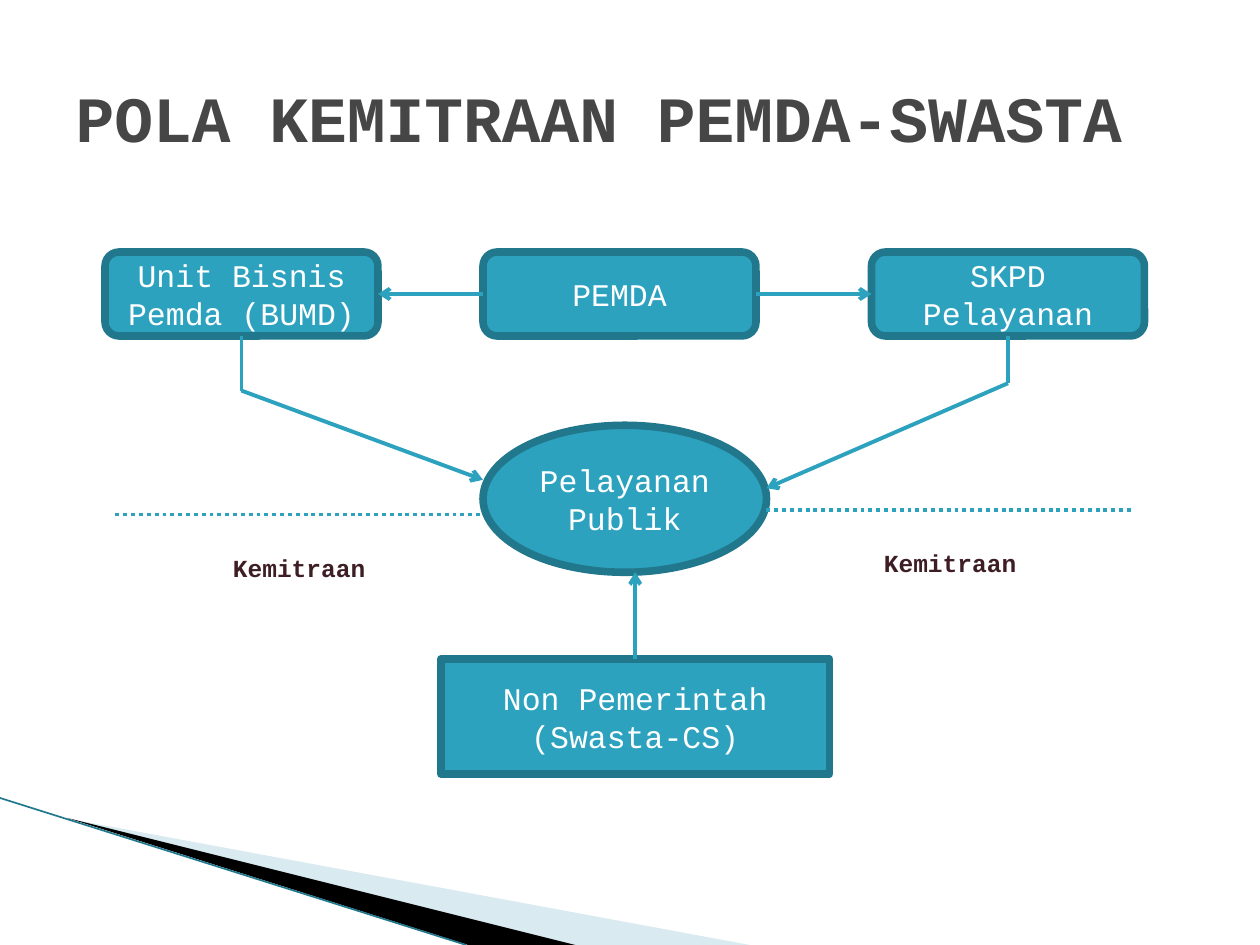
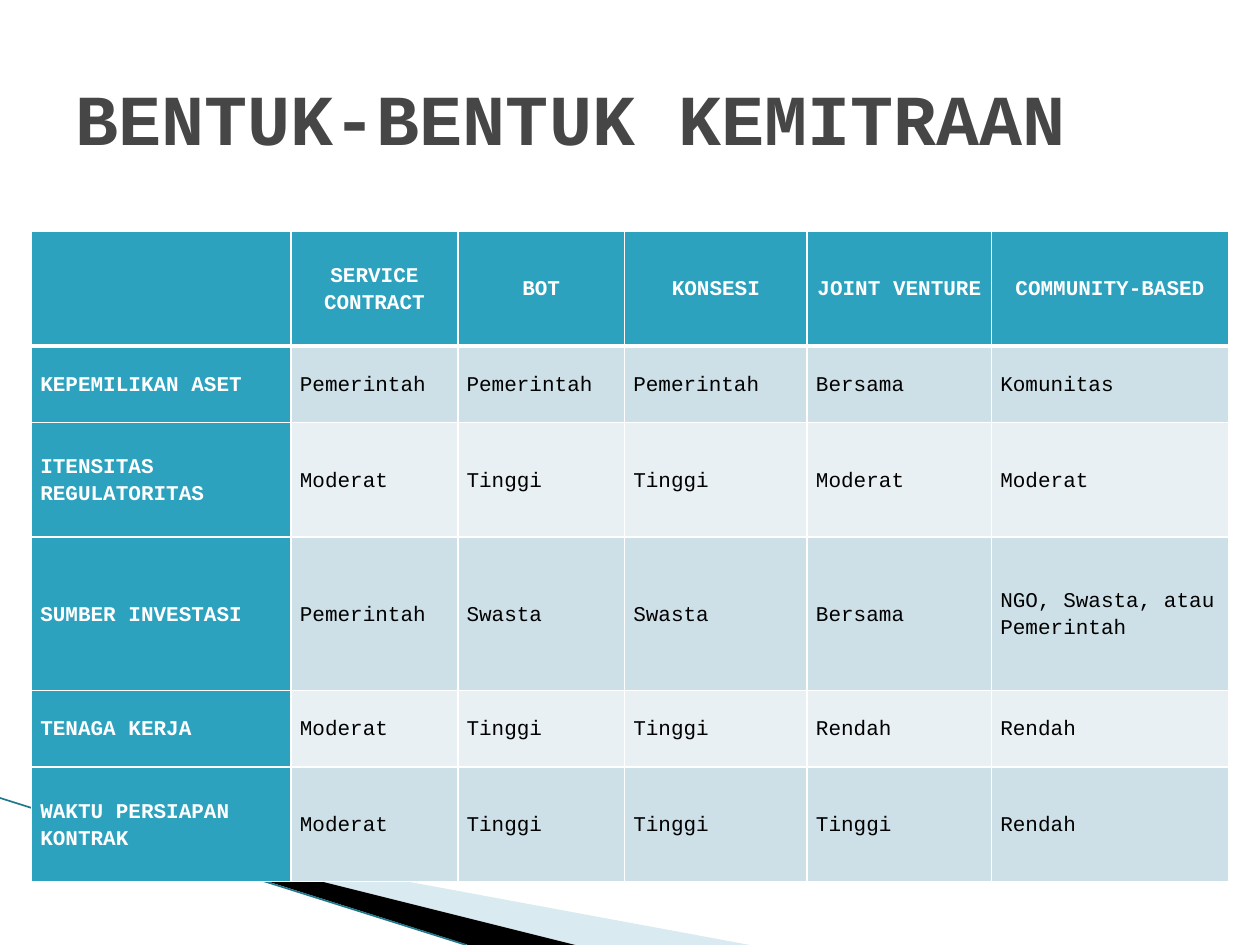
import pptx
import pptx.util
import pptx.dml.color
import pptx.enum.shapes
import pptx.enum.text
import pptx.enum.dml
import pptx.oxml
import pptx.oxml.ns
from dataclasses import dataclass
from lxml import etree

SHAPE = pptx.enum.shapes.MSO_SHAPE
ALIGN = pptx.enum.text.PP_ALIGN
MIDDLE = pptx.enum.text.MSO_ANCHOR.MIDDLE
DOTTED = pptx.enum.dml.MSO_LINE.ROUND_DOT


@dataclass(frozen=True)
class Theme:
    font: str = "Courier New"
    title: str = "464646"
    accent: str = "2DA2BF"
    edge: str = "21788D"
    white: str = "FFFFFF"
    black: str = "000000"
    label: str = "3E1E25"
    sweep: str = "A0CBDC"
    bands: tuple = ("CDE0E8", "E8F0F4")
    box_size: float = 18
    label_size: float = 14
    cell_size: float = 12
    edge_width: float = 4.33
    link_width: float = 2.25
    sweep_width: float = 0.95


T = Theme()
WIDTH, HEIGHT = 10, 7.5
COLS, ROWS = 120, 90
TITLE_AREA = (6, 3.6, 108, 15)

SWEEPS = [
    (T.sweep, 40, [(6.6, 78), (71.4, 90), (54.7, 90)]),
    (T.black, 100, [(6.4, 77.9), (54.8, 90), (44.6, 90)]),
]
SWEEP_EDGE = ((0, 76), (44.4, 90))

PATTERN_TITLE = ("POLA KEMITRAAN PEMDA-SWASTA", 36.9)
BOXES = {
    "bumd": ("Unit Bisnis Pemda (BUMD)", SHAPE.ROUNDED_RECTANGLE, (10, 24, 26, 8)),
    "pemda": ("PEMDA", SHAPE.ROUNDED_RECTANGLE, (46, 24, 26, 8)),
    "skpd": ("SKPD Pelayanan", SHAPE.ROUNDED_RECTANGLE, (83, 24, 26, 8)),
    "service": ("Pelayanan Publik", SHAPE.OVAL, (46, 40.5, 27, 14)),
    "private": ("Non Pemerintah (Swasta-CS)", SHAPE.RECTANGLE, (42, 62.75, 37, 11)),
}
LABELS = [("Kemitraan", (16, 51.8, 25, 4.5)), ("Kemitraan", (78, 51.3, 25, 4.5))]

FORMS_TITLE = ("BENTUK-BENTUK KEMITRAAN", 41)
FORMS_AREA = (3, 22, 114, 62)
FORMS_COLUMNS = [24.72, 15.88, 15.88, 17.4, 17.56, 22.56]
FORMS_ROW_SHARES = [3, 2, 3, 4, 2, 3]
FORMS = [
    ("", "SERVICE CONTRACT", "BOT", "KONSESI", "JOINT VENTURE", "COMMUNITY-BASED"),
    ("KEPEMILIKAN ASET", "Pemerintah", "Pemerintah", "Pemerintah", "Bersama", "Komunitas"),
    ("ITENSITAS REGULATORITAS", "Moderat", "Tinggi", "Tinggi", "Moderat", "Moderat"),
    ("SUMBER INVESTASI", "Pemerintah", "Swasta", "Swasta", "Bersama", "NGO, Swasta, atau Pemerintah"),
    ("TENAGA KERJA", "Moderat", "Tinggi", "Tinggi", "Rendah", "Rendah"),
    ("WAKTU PERSIAPAN KONTRAK", "Moderat", "Tinggi", "Tinggi", "Tinggi", "Rendah"),
]


def x(col):
    return pptx.util.Inches(col * WIDTH / COLS)


def y(row):
    return pptx.util.Inches(row * HEIGHT / ROWS)


def place(area):
    left, top, width, height = area
    return x(left), y(top), x(width), y(height)


def rgb(color):
    return pptx.dml.color.RGBColor.from_string(color)


def paint(part, color):
    part.fill.solid()
    part.fill.fore_color.rgb = rgb(color)


def write(tf, text, size, color, bold=False, align=ALIGN.CENTER):
    tf.text = text
    p = tf.paragraphs[0]
    p.alignment = align
    for r in p.runs:
        r.font.name = T.font
        r.font.size = pptx.util.Pt(size)
        r.font.bold = bold
        r.font.color.rgb = rgb(color)
    return p


def add_child(parent, tag, **attributes):
    return etree.SubElement(parent, pptx.oxml.ns.qn(tag), **attributes)


def add_box(s, text, kind, area, fill, edge, size, color, bold=False):
    sp = s.shapes.add_shape(kind, *place(area))
    sp.shadow.inherit = False
    paint(sp, fill)
    sp.line.color.rgb = rgb(edge)
    sp.line.width = pptx.util.Pt(T.edge_width)
    tf = sp.text_frame
    tf.word_wrap = True
    tf.vertical_anchor = MIDDLE
    write(tf, text, size, color, bold)


def add_line(s, start, end, color=T.accent, width=T.link_width, arrow=False, dash=None):
    sp = s.shapes.add_connector(
        pptx.enum.shapes.MSO_CONNECTOR.STRAIGHT, x(start[0]), y(start[1]), x(end[0]), y(end[1]))
    sp.line.color.rgb = rgb(color)
    sp.line.width = pptx.util.Pt(width)
    if dash:
        sp.line.dash_style = dash
    if arrow:
        add_child(sp.line._get_or_add_ln(), "a:tailEnd", type="arrow")
    add_child(sp.element.spPr, "a:effectLst")
    return sp


def add_sweep(s, color, opacity, points):
    corners = [(x(col), y(row)) for col, row in points]
    outline = s.shapes.build_freeform(*corners[0])
    outline.add_line_segments(corners[1:])
    sp = outline.convert_to_shape()
    sp.shadow.inherit = False
    paint(sp, color)
    sp.line.fill.background()
    if opacity < 100:
        tone = sp.element.spPr.find(".//" + pptx.oxml.ns.qn("a:srgbClr"))
        add_child(tone, "a:alpha", val=str(opacity * 1000))
    return sp


def decorate_master(prs, s):
    parts = [add_sweep(s, *sweep) for sweep in SWEEPS]
    parts.append(add_line(s, *SWEEP_EDGE, T.edge, T.sweep_width))
    for sp in parts:
        prs.slide_master.shapes.element.append(sp.element)


def add_slide(prs, title, size):
    s = prs.slides.add_slide(prs.slide_layouts[5])
    sp = s.shapes.title
    sp.left, sp.top, sp.width, sp.height = place(TITLE_AREA)
    sp.text_frame.word_wrap = True
    sp.text_frame.vertical_anchor = MIDDLE
    write(sp.text_frame, title, size, T.title, True, ALIGN.LEFT)
    return s


def side(name, across, down):
    left, top, width, height = BOXES[name][2]
    return left + width * across, top + height * down


def draw_pattern(s):
    for text, kind, area in BOXES.values():
        add_box(s, text, kind, area, T.accent, T.edge, T.box_size, T.white)
    for text, area in LABELS:
        add_box(s, text, SHAPE.RECTANGLE, area, T.white, T.white, T.label_size, T.label, True)

    add_line(s, side("pemda", 0, 0.5), side("bumd", 1, 0.5), arrow=True)
    add_line(s, side("pemda", 1, 0.5), side("skpd", 0, 0.5), arrow=True)
    for name, bend, end in [("bumd", 37.2, (46, 45.7)), ("skpd", 36.5, (73, 46.5))]:
        start = side(name, 0.5, 1)
        corner = (start[0], bend)
        add_line(s, start, corner)
        add_line(s, corner, end, arrow=True)
    for left, right, row in [(11, 46, 49), (73, 108, 48.6)]:
        add_line(s, (left, row), (right, row), dash=DOTTED)
    top = side("private", 0.5, 0)
    add_line(s, top, (top[0], 54.5), arrow=True)


def add_borders(cell, header):
    tcPr = cell._tc.get_or_add_tcPr()
    for edge in ("L", "R", "T", "B"):
        width = 3 if header and edge == "B" else 1
        ln = add_child(tcPr, "a:ln" + edge, w=str(pptx.util.Pt(width)))
        add_child(add_child(ln, "a:solidFill"), "a:srgbClr", val=T.white)


def draw_forms(s):
    table = s.shapes.add_table(len(FORMS), len(FORMS[0]), *place(FORMS_AREA)).table
    for column, width in zip(table.columns, FORMS_COLUMNS):
        column.width = x(width)
    for row, share in zip(table.rows, FORMS_ROW_SHARES):
        row.height = y(FORMS_AREA[3] * share / sum(FORMS_ROW_SHARES))
    for i, texts in enumerate(FORMS):
        for j, text in enumerate(texts):
            cell = table.cell(i, j)
            heading = i == 0 or j == 0
            add_borders(cell, i == 0)
            paint(cell, T.accent if heading else T.bands[(i - 1) % 2])
            cell.vertical_anchor = MIDDLE
            cell.margin_left = cell.margin_right = pptx.util.Inches(0.07)
            cell.margin_top = cell.margin_bottom = 0
            p = write(cell.text_frame, text, T.cell_size, T.white if heading else T.black,
                      heading, ALIGN.CENTER if i == 0 else ALIGN.LEFT)
            p.line_spacing = 1.15


def main():
    prs = pptx.Presentation()
    prs.slide_width = pptx.util.Inches(WIDTH)
    prs.slide_height = pptx.util.Inches(HEIGHT)
    pattern = add_slide(prs, *PATTERN_TITLE)
    decorate_master(prs, pattern)
    draw_pattern(pattern)
    draw_forms(add_slide(prs, *FORMS_TITLE))
    prs.save("out.pptx")


if __name__ == "__main__":
    main()
